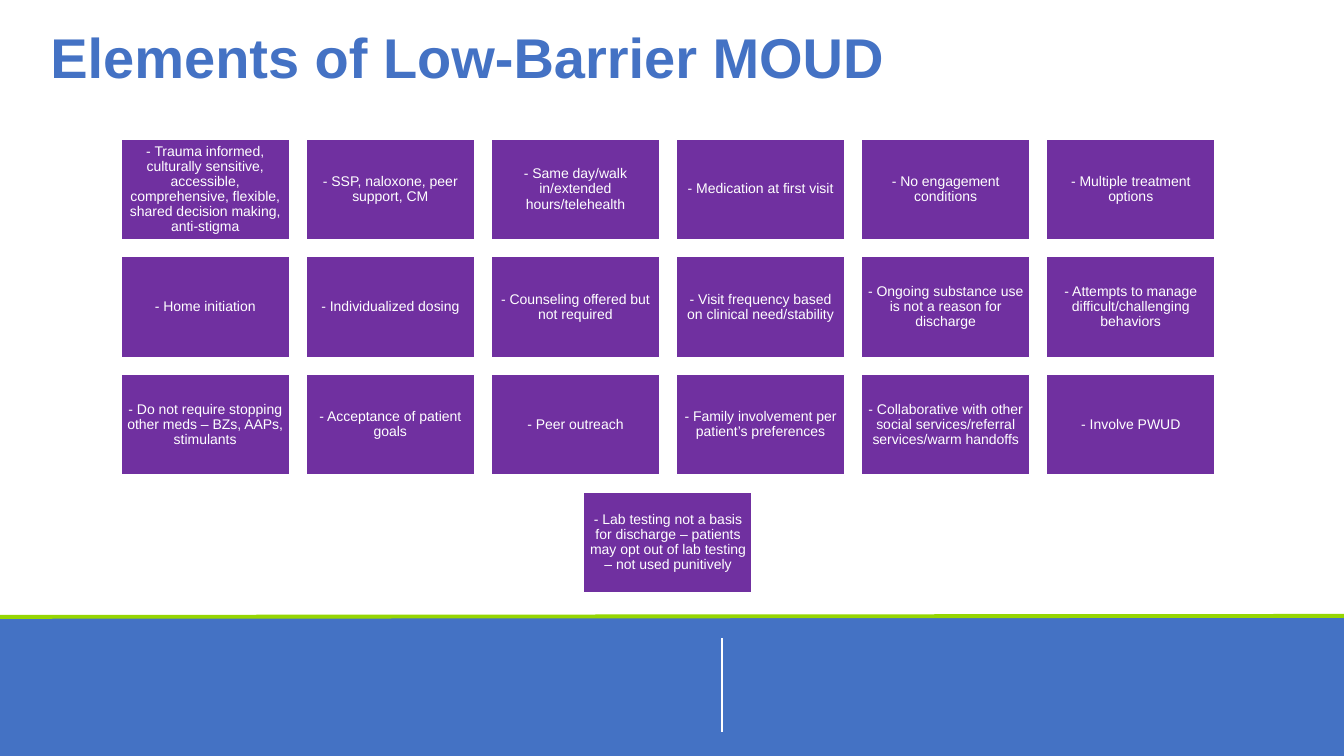
import pptx
import pptx.util
import pptx.dml.color
import pptx.enum.shapes
import pptx.enum.text
import pptx.oxml

Inches = pptx.util.Inches
Pt = pptx.util.Pt
RGBColor = pptx.dml.color.RGBColor
RECT = pptx.enum.shapes.MSO_SHAPE.RECTANGLE
LINE = pptx.enum.shapes.MSO_CONNECTOR.STRAIGHT
ANCHOR = pptx.enum.text.MSO_ANCHOR
ALIGN = pptx.enum.text.PP_ALIGN

BLUE = RGBColor(0x44, 0x72, 0xC4)
GREEN = RGBColor(0x96, 0xD6, 0x03)
PURPLE = RGBColor(0x70, 0x30, 0xA0)
WHITE = RGBColor(0xFF, 0xFF, 0xFF)

WIDE, HIGH = 13.33, 7.5
COLS = 6
TILES = [
    "Trauma informed, culturally sensitive, accessible, comprehensive, "
    "flexible, shared decision making, anti-stigma",
    "SSP, naloxone, peer support, CM",
    "Same day/walk in/extended hours/telehealth",
    "Medication at first visit",
    "No engagement conditions",
    "Multiple treatment options",
    "Home initiation",
    "Individualized dosing",
    "Counseling offered but not required",
    "Visit frequency based on clinical need/stability",
    "Ongoing substance use is not a reason for discharge",
    "Attempts to manage difficult/challenging behaviors",
    "Do not require stopping other meds – BZs, AAPs, stimulants",
    "Acceptance of patient goals",
    "Peer outreach",
    "Family involvement per patient’s preferences",
    "Collaborative with other social services/referral services/warm handoffs",
    "Involve PWUD",
    "Lab testing not a basis for discharge – patients may opt out of "
    "lab testing – not used punitively",
]


def add_box(slide, x, y, w, h, fill):
    box = slide.shapes.add_shape(RECT, Inches(x), Inches(y), Inches(w), Inches(h))
    box.shadow.inherit = False
    box.fill.solid()
    box.fill.fore_color.rgb = fill
    box.line.fill.background()
    return box


def add_line(slide, x1, y1, x2, y2, color, width):
    line = slide.shapes.add_connector(
        LINE, Inches(x1), Inches(y1), Inches(x2), Inches(y2))
    line.line.color.rgb = color
    line.line.width = Pt(width)
    props = line._element.spPr
    props.append(pptx.oxml.parse_xml(
        '<a:effectLst xmlns:a="http://schemas.openxmlformats.org/drawingml/2006/main"/>'))


def set_text(frame, text, size, color, inset):
    frame.word_wrap = True
    frame.auto_size = pptx.enum.text.MSO_AUTO_SIZE.NONE
    frame.margin_left = frame.margin_right = Inches(inset)
    frame.margin_top = frame.margin_bottom = Inches(inset)
    frame.text = text
    para = frame.paragraphs[0]
    para.line_spacing = 0.9
    para.font.name = "Arial"
    para.font.size = Pt(size)
    para.font.color.rgb = color
    return para


def add_title(slide, x, y, w, h):
    title = slide.shapes.title
    title.left, title.top = Inches(x), Inches(y)
    title.width, title.height = Inches(w), Inches(h)
    para = set_text(title.text_frame, "Elements of Low-Barrier MOUD", 40, BLUE, 0)
    para.font.bold = True
    para.alignment = ALIGN.LEFT
    title.text_frame.vertical_anchor = ANCHOR.TOP


def add_footer(slide, x, y, w, h):
    add_box(slide, x, y, w, h, BLUE)
    add_line(slide, x, y, x + w, y - 0.01, GREEN, 2.75)
    add_line(slide, x + 7.16, y + 0.21, x + 7.16, y + 1.14, WHITE, 1)


def add_tiles(slide, x, y, w, h):
    """Fill the box with rows of tiles; a short last row is centred."""
    wide, high = 1.67, 1
    rows = -(-len(TILES) // COLS)
    step = (w - wide) / (COLS - 1)
    drop = (h - high) / (rows - 1)
    for i, text in enumerate(TILES):
        row, col = divmod(i, COLS)
        count = min(COLS, len(TILES) - row * COLS)
        left = x + (col + (COLS - count) / 2) * step
        tile = add_box(slide, left, y + row * drop, wide, high, PURPLE)
        tile.line.color.rgb = WHITE
        tile.line.width = Pt(1)
        para = set_text(tile.text_frame, "- " + text, 10, WHITE, 0.04)
        para.alignment = ALIGN.CENTER
        tile.text_frame.vertical_anchor = ANCHOR.MIDDLE


def main():
    deck = pptx.Presentation()
    deck.slide_width, deck.slide_height = Inches(WIDE), Inches(HIGH)
    slide = deck.slides.add_slide(deck.slide_layouts[5])
    add_footer(slide, 0, 6.12, WIDE, 1.38)
    add_title(slide, 0.5, 0.3, 12.25, 1.07)
    add_tiles(slide, 1.2, 1.38, 10.85, 4.5)
    deck.save("out.pptx")


if __name__ == "__main__":
    main()
